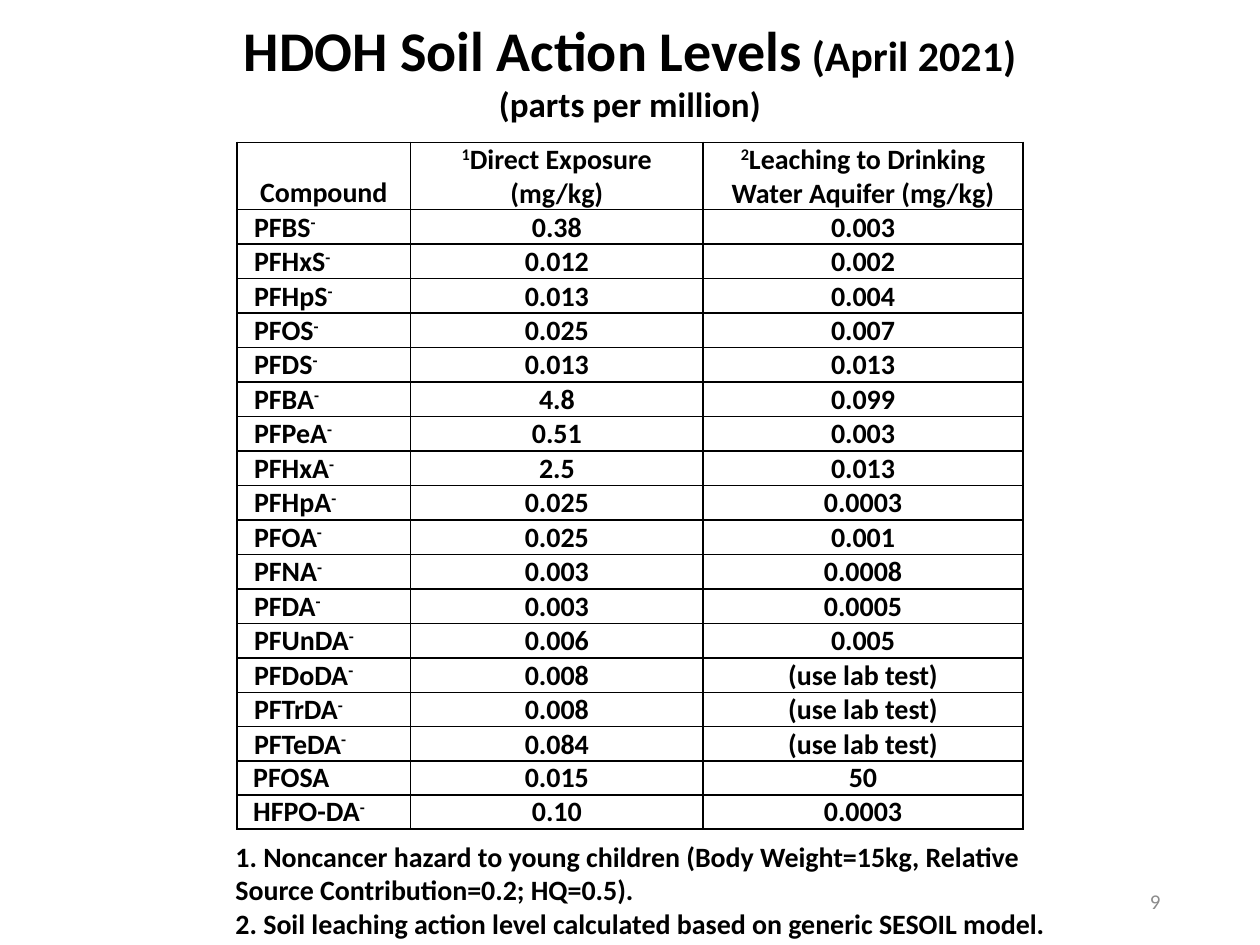
from lxml.etree import SubElement
from pptx import Presentation
from pptx.dml.color import RGBColor
from pptx.enum.text import MSO_ANCHOR as ANCHOR, MSO_AUTO_SIZE as AUTO, PP_ALIGN as ALIGN
from pptx.oxml.ns import qn
from pptx.util import Inches, Pt

# Content: text between carets is superscript
TITLE = [[("HDOH Soil Action Levels", 32), (" (April 2021)", 24)],
         [("(parts per million)", 20)]]
HEADER = ["Compound", "^1^Direct Exposure\n(mg/kg)",
          "^2^Leaching to Drinking Water Aquifer (mg/kg)"]
LEVELS = [
    ("PFBS^-^", "0.38", "0.003"),
    ("PFHxS^-^", "0.012", "0.002"),
    ("PFHpS^-^", "0.013", "0.004"),
    ("PFOS^-^", "0.025", "0.007"),
    ("PFDS^-^", "0.013", "0.013"),
    ("PFBA^-^", "4.8", "0.099"),
    ("PFPeA^-^", "0.51", "0.003"),
    ("PFHxA^-^", "2.5", "0.013"),
    ("PFHpA^-^", "0.025", "0.0003"),
    ("PFOA^-^", "0.025", "0.001"),
    ("PFNA^-^", "0.003", "0.0008"),
    ("PFDA^-^", "0.003", "0.0005"),
    ("PFUnDA^-^", "0.006", "0.005"),
    ("PFDoDA^-^", "0.008", "(use lab test)"),
    ("PFTrDA^-^", "0.008", "(use lab test)"),
    ("PFTeDA^-^", "0.084", "(use lab test)"),
    ("PFOSA", "0.015", "50"),
    ("HFPO-DA^-^", "0.10", "0.0003"),
]
NOTES = [
    "1. Noncancer hazard to young children (Body Weight=15kg, "
    "Relative Source Contribution=0.2; HQ=0.5).",
    "2. Soil leaching action level calculated based on generic SESOIL model.",
]
COL_WIDTHS = [1.38, 2.32, 2.54]
HEADER_HEIGHT, ROW_HEIGHT = 0.53, 0.27
TIGHT_ROWS = 2  # last rows have no cell margin
FONT = "Calibri"
BLACK, GRAY = RGBColor(0, 0, 0), RGBColor(0x8C, 0x8C, 0x8C)


def style(p, size, align=ALIGN.LEFT, color=BLACK, bold=True):
    p.alignment = align
    f = p.font
    f.name, f.size, f.bold, f.color.rgb = FONT, Pt(size), bold, color


def add_runs(p, text):
    for i, part in enumerate(text.split("^")):
        if part:
            r = p.add_run()
            r.text = part
            if i % 2:
                r._r.get_or_add_rPr().set("baseline", "30000")


def add_paragraphs(tf, count):
    return [tf.paragraphs[0]] + [tf.add_paragraph() for _ in range(count - 1)]


def add_box(s, left, top, width, height, wrap=True, auto=AUTO.SHAPE_TO_FIT_TEXT):
    tf = s.shapes.add_textbox(*map(Inches, (left, top, width, height))).text_frame
    tf.word_wrap, tf.auto_size = wrap, auto
    return tf


def add_borders(cell):
    tcPr = cell._tc.get_or_add_tcPr()
    for side in "LRTB":
        ln = SubElement(tcPr, qn(f"a:ln{side}"), w=str(Pt(1)))
        SubElement(SubElement(ln, qn("a:solidFill")), qn("a:srgbClr"), val=str(BLACK))


def fill_cell(cell, text, margin, indent):
    add_borders(cell)
    cell.fill.background()
    cell.vertical_anchor = ANCHOR.BOTTOM
    cell.margin_left = cell.margin_right = cell.margin_top = margin
    cell.margin_bottom = 0
    lines = text.split("\n")
    for p, line in zip(add_paragraphs(cell.text_frame, len(lines)), lines):
        style(p, 16, ALIGN.LEFT if indent else ALIGN.CENTER)
        if indent:
            p._p.get_or_add_pPr().set("marL", str(Inches(0.13)))
        add_runs(p, line)


prs = Presentation()
prs.slide_width, prs.slide_height = Inches(10), Inches(7.5)
s = prs.slides.add_slide(prs.slide_layouts[6])

# Title
tf = add_box(s, 1.72, 0.07, 6.56, 0.98, wrap=False)
for p, runs in zip(add_paragraphs(tf, len(TITLE)), TITLE):
    style(p, runs[0][1], ALIGN.CENTER)
    for text, size in runs:
        r = p.add_run()
        r.text, r.font.size = text, Pt(size)

# Action level table
rows = [HEADER] + LEVELS
heights = [HEADER_HEIGHT] + [ROW_HEIGHT] * len(LEVELS)
table = s.shapes.add_table(len(rows), len(HEADER), Inches(1.88), Inches(1.13),
                           Inches(sum(COL_WIDTHS)), Inches(sum(heights))).table
table.first_row = table.horz_banding = False
for col, width in zip(table.columns, COL_WIDTHS):
    col.width = Inches(width)
for i, (row, height) in enumerate(zip(rows, heights)):
    table.rows[i].height = Inches(height)
    margin = Pt(0.5) if 0 < i < len(rows) - TIGHT_ROWS else 0
    for j, text in enumerate(row):
        fill_cell(table.cell(i, j), text, margin, indent=i > 0 and j == 0)
table.cell(len(rows) - 1, 0).vertical_anchor = ANCHOR.MIDDLE

# Slide number
tf = add_box(s, 7.06, 6.95, 2.25, 0.4, auto=AUTO.NONE)
tf.vertical_anchor = ANCHOR.MIDDLE
p = tf.paragraphs[0]
style(p, 12, ALIGN.RIGHT, GRAY, bold=False)
add_runs(p, "9")

# Footnotes
tf = add_box(s, 1.77, 6.61, 6.71, 0.91)
for p, note in zip(add_paragraphs(tf, len(NOTES)), NOTES):
    style(p, 16)
    add_runs(p, note)

prs.save("out.pptx")
